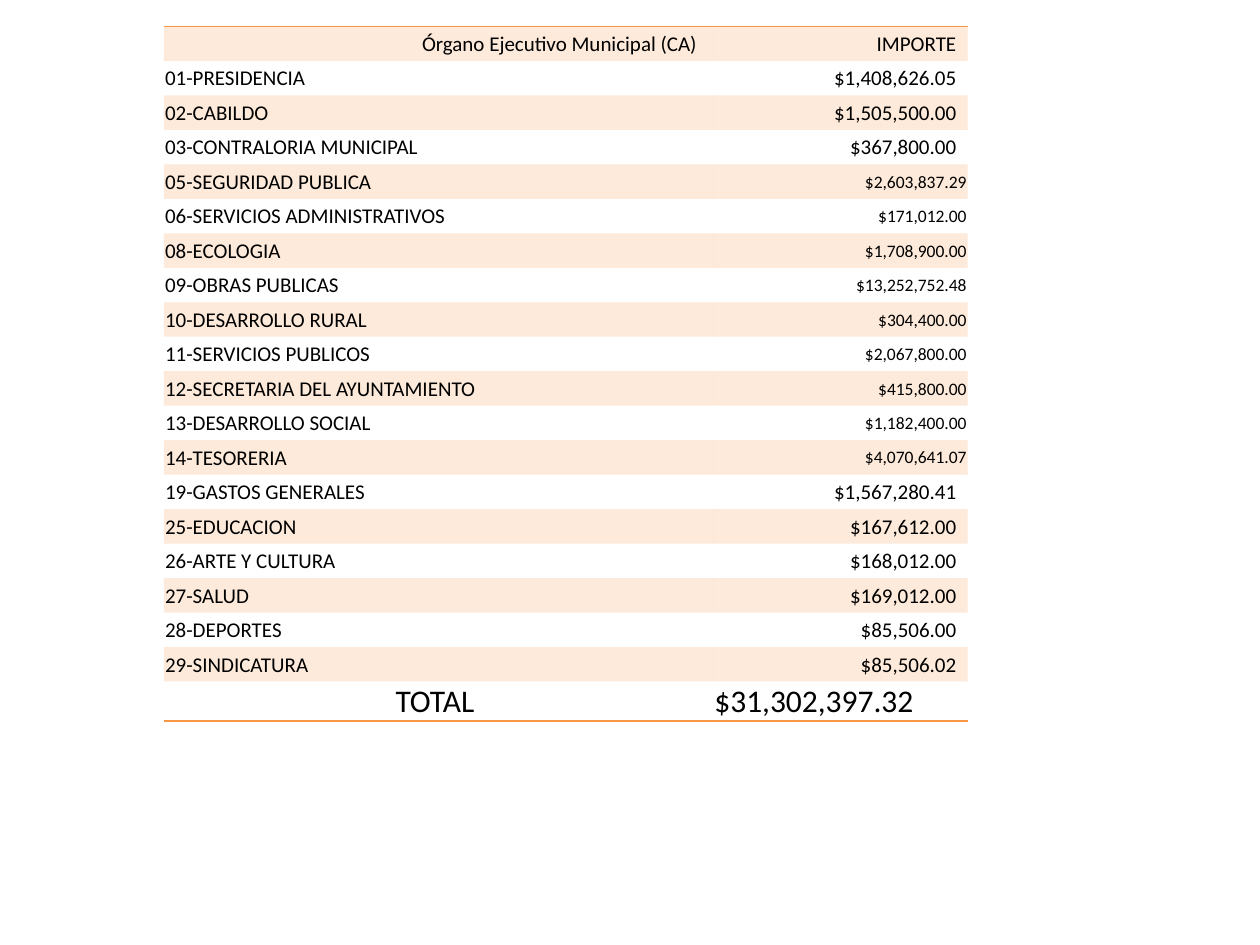
from dataclasses import dataclass

from lxml.etree import SubElement
from pptx import Presentation
from pptx.dml.color import RGBColor
from pptx.enum.text import MSO_ANCHOR, PP_ALIGN
from pptx.oxml import parse_xml
from pptx.oxml.ns import nsdecls, qn
from pptx.util import Inches, Pt


@dataclass(frozen=True)
class Theme:
    font: str = "Calibri"
    text: str = "000000"
    accent: str = "F79646"
    band_opacity: int = 20
    border_width: float = 1
    body_size: int = 12
    small_size: int = 10
    total_size: int = 18


THEME = Theme()
NO_STYLE = "{2D5ABB26-0587-4C30-8999-92F81FD0307C}"
EDGE = 0.01
AMOUNT_INDENT = 0.09
COLUMN_WIDTHS = (4.36, 2.02)
TOTAL_HEIGHT = 0.31

HEADER = ("Órgano Ejecutivo Municipal (CA) ", "IMPORTE")
DEPARTMENTS = [
    ("01-PRESIDENCIA", "$1,408,626.05"),
    ("02-CABILDO", "$1,505,500.00"),
    ("03-CONTRALORIA MUNICIPAL", "$367,800.00"),
    ("05-SEGURIDAD PUBLICA", "$2,603,837.29"),
    ("06-SERVICIOS ADMINISTRATIVOS", "$171,012.00"),
    ("08-ECOLOGIA", "$1,708,900.00"),
    ("09-OBRAS PUBLICAS", "$13,252,752.48"),
    ("10-DESARROLLO RURAL", "$304,400.00"),
    ("11-SERVICIOS PUBLICOS", "$2,067,800.00"),
    ("12-SECRETARIA DEL AYUNTAMIENTO", "$415,800.00"),
    ("13-DESARROLLO SOCIAL", "$1,182,400.00"),
    ("14-TESORERIA", "$4,070,641.07"),
    ("19-GASTOS GENERALES", "$1,567,280.41"),
    ("25-EDUCACION", "$167,612.00"),
    ("26-ARTE Y CULTURA", "$168,012.00"),
    ("27-SALUD", "$169,012.00"),
    ("28-DEPORTES", "$85,506.00"),
    ("29-SINDICATURA", "$85,506.02"),
]
SMALL_AMOUNTS = range(3, 12)
TOTAL = ("TOTAL ", "$31,302,397.32")


def write_cell(cell, text, alignment, size=THEME.body_size, right=EDGE,
               anchor=MSO_ANCHOR.MIDDLE):
    cell.margin_left = cell.margin_top = Inches(EDGE)
    cell.margin_right = Inches(right)
    cell.margin_bottom = 0
    cell.vertical_anchor = anchor
    cell.text_frame.text = text
    paragraph = cell.text_frame.paragraphs[0]
    paragraph.alignment = alignment
    font = paragraph.runs[0].font
    font.name = THEME.font
    font.size = Pt(size)
    font.color.rgb = RGBColor.from_string(THEME.text)


def fill_cell(cell, banded):
    if not banded:
        cell.fill.background()
        return
    cell.fill.solid()
    cell.fill.fore_color.rgb = RGBColor.from_string(THEME.accent)
    color = cell.fill._xPr.find(qn("a:solidFill"))[0]
    SubElement(color, qn("a:alpha"), val=str(THEME.band_opacity * 1000))


def add_border(cell, side):
    """Draw one accent line; side is T for top or B for bottom."""
    line = parse_xml(
        f'<a:ln{side} {nsdecls("a")} w="{Pt(THEME.border_width)}"><a:solidFill>'
        f'<a:srgbClr val="{THEME.accent}"/></a:solidFill></a:ln{side}>')
    cell._tc.get_or_add_tcPr().insert(0, line)


def add_budget_table(slide, left, top, width, height):
    row_count = len(DEPARTMENTS) + 2
    frame = slide.shapes.add_table(row_count, 2, Inches(left), Inches(top),
                                   Inches(width), Inches(height))
    table = frame.table
    table.first_row = table.horz_banding = False
    table._tbl.tblPr.find(qn("a:tableStyleId")).text = NO_STYLE
    for column, share in zip(table.columns, COLUMN_WIDTHS):
        column.width = Inches(width * share / sum(COLUMN_WIDTHS))
    row_height = (height - TOTAL_HEIGHT) / (row_count - 1)
    for index, row in enumerate(table.rows):
        last = index == row_count - 1
        row.height = Inches(TOTAL_HEIGHT if last else row_height)
        for cell in row.cells:
            fill_cell(cell, banded=index % 2 == 0)

    for column, text in enumerate(HEADER):
        cell = table.cell(0, column)
        write_cell(cell, text, PP_ALIGN.RIGHT, right=AMOUNT_INDENT)
        add_border(cell, "T")

    for index, (department, amount) in enumerate(DEPARTMENTS):
        small = index in SMALL_AMOUNTS
        write_cell(table.cell(index + 1, 0), department, PP_ALIGN.LEFT)
        write_cell(table.cell(index + 1, 1), amount, PP_ALIGN.RIGHT,
                   size=THEME.small_size if small else THEME.body_size,
                   right=EDGE if small else AMOUNT_INDENT)

    for column, alignment in enumerate((PP_ALIGN.CENTER, PP_ALIGN.LEFT)):
        cell = table.cell(row_count - 1, column)
        write_cell(cell, TOTAL[column], alignment, size=THEME.total_size,
                   anchor=MSO_ANCHOR.TOP)
        add_border(cell, "B")


def main():
    presentation = Presentation()
    presentation.slide_width = Inches(10)
    presentation.slide_height = Inches(7.5)
    slide = presentation.slides.add_slide(presentation.slide_layouts[6])
    add_budget_table(slide, 1.3, 0.21, 6.38, 5.51)
    presentation.save("out.pptx")


if __name__ == "__main__":
    main()
